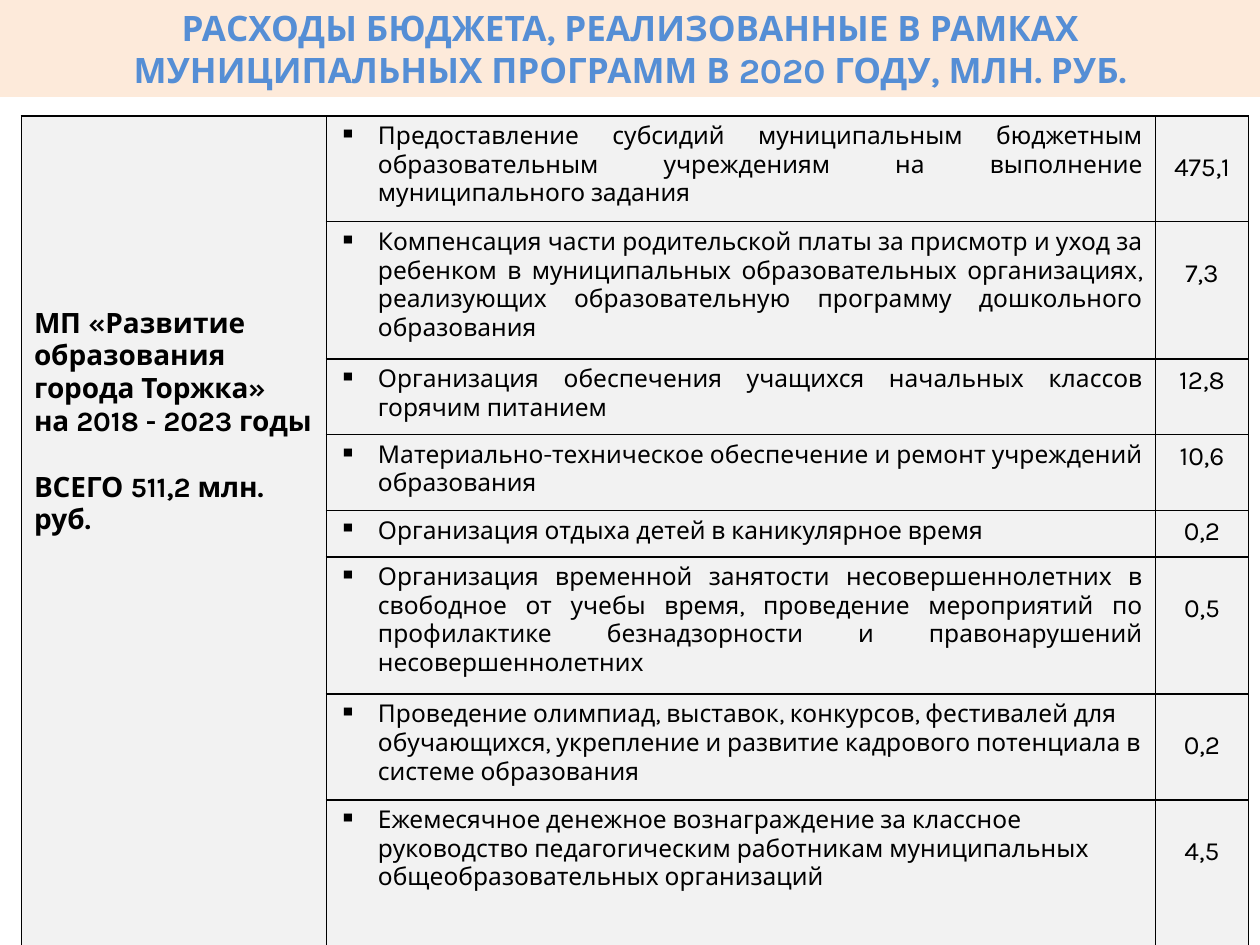
from dataclasses import dataclass

from lxml import etree
from pptx import Presentation
from pptx import util as u
from pptx.dml import color
from pptx.enum import shapes, text
from pptx.oxml import ns


@dataclass(frozen=True)
class Theme:
    """Colours, type sizes and font of the slide."""
    font: str = "Karla"
    ink: str = "000000"
    title_ink: str = "558ED5"
    title_fill: str = "FDEADA"
    cell_fill: str = "F2F2F2"
    title_size: int = 20
    programme_size: int = 16
    item_size: int = 14
    amount_size: int = 15


THEME = Theme()
ALIGN = text.PP_ALIGN

TITLE = ["РАСХОДЫ БЮДЖЕТА, РЕАЛИЗОВАННЫЕ В РАМКАХ",
         "МУНИЦИПАЛЬНЫХ ПРОГРАММ В 2020 ГОДУ, МЛН. РУБ."]
PROGRAMME = ["МП «Развитие образования города Торжка»",
             "на 2018 - 2023 годы",
             "ВСЕГО 511,2 млн. руб."]
COLUMNS = [2.42, 6.58, 0.74]
EXPENSES = [
    ("Предоставление субсидий муниципальным бюджетным образовательным "
     "учреждениям на выполнение муниципального задания", "475,1", 0.84),
    ("Компенсация части родительской платы за присмотр и уход за ребенком "
     "в муниципальных образовательных организациях, реализующих "
     "образовательную программу дошкольного образования", "7,3", 1.09),
    ("Организация обеспечения учащихся начальных классов горячим питанием",
     "12,8", 0.6),
    ("Материально-техническое обеспечение и ремонт учреждений образования",
     "10,6", 0.6),
    ("Организация отдыха детей в каникулярное время", "0,2", 0.37),
    ("Организация временной занятости несовершеннолетних в свободное от учебы "
     "время, проведение мероприятий по профилактике безнадзорности и "
     "правонарушений несовершеннолетних", "0,5", 1.09),
    ("Проведение олимпиад, выставок, конкурсов, фестивалей для обучающихся, "
     "укрепление и развитие кадрового потенциала в системе образования",
     "0,2", 0.84),
    ("Ежемесячное денежное вознаграждение за классное руководство "
     "педагогическим работникам муниципальных общеобразовательных организаций",
     "4,5", 1.15),
]
JUSTIFIED_ROWS = 6
TALL_ROW = 0.8


def apply_format(target, values):
    """Set each named attribute of the target."""
    for name, value in values.items():
        setattr(target, name, value)


def write_lines(frame, lines, size, ink, bold=False, **paragraph_format):
    """Fill a text frame with one paragraph per line."""
    frame.word_wrap = True
    for index, line in enumerate(lines):
        paragraph = frame.paragraphs[0] if index == 0 else frame.add_paragraph()
        apply_format(paragraph, paragraph_format)
        run = paragraph.add_run()
        run.text = line
        apply_format(run.font, {"name": THEME.font, "size": u.Pt(size), "bold": bold})
        run.font.color.rgb = color.RGBColor.from_string(ink)


def add_bullet(paragraph):
    """Give a paragraph a hanging square bullet."""
    properties = paragraph._p.get_or_add_pPr()
    apply_indent = {"marL": u.Inches(0.31), "indent": -u.Inches(0.31)}
    for name, value in apply_indent.items():
        properties.set(name, str(int(value)))
    etree.SubElement(properties, ns.qn("a:buChar"), char="▪")


def style_cell(cell):
    """Give a cell its black borders and plain fill."""
    properties = cell._tc.get_or_add_tcPr()
    for side in ("a:lnL", "a:lnR", "a:lnT", "a:lnB"):
        border = etree.SubElement(properties, ns.qn(side), w=str(int(u.Pt(1))))
        fill = etree.SubElement(border, ns.qn("a:solidFill"))
        etree.SubElement(fill, ns.qn("a:srgbClr"), val=THEME.ink)
    cell.fill.solid()
    cell.fill.fore_color.rgb = color.RGBColor.from_string(THEME.cell_fill)


def add_title(slide):
    """Add the title band across the top."""
    band = slide.shapes.add_shape(shapes.MSO_SHAPE.RECTANGLE, 0, 0,
                                  u.Inches(10), u.Inches(0.77))
    band.shadow.inherit = False
    band.fill.solid()
    band.fill.fore_color.rgb = color.RGBColor.from_string(THEME.title_fill)
    band.line.fill.background()
    write_lines(band.text_frame, TITLE, THEME.title_size, THEME.title_ink,
                bold=True, alignment=ALIGN.CENTER)


def fill_programme(table):
    """Merge the first column and write the programme name and total."""
    cell = table.cell(0, 0)
    cell.merge(table.cell(len(EXPENSES) - 1, 0))
    cell.margin_top = u.Inches(1.52)
    write_lines(cell.text_frame, PROGRAMME, THEME.programme_size, THEME.ink,
                bold=True, alignment=ALIGN.LEFT)
    cell.text_frame.paragraphs[-1].space_before = u.Pt(19)


def fill_expense(table, row, item, amount, height):
    """Write one expense item and its amount."""
    table.rows[row].height = u.Inches(height)
    item_format = {"alignment": ALIGN.LEFT}
    if row < JUSTIFIED_ROWS:
        item_format = {"alignment": ALIGN.JUSTIFY, "space_before": u.Pt(8)}
    item_frame = table.cell(row, 1).text_frame
    write_lines(item_frame, [item], THEME.item_size, THEME.ink, **item_format)
    add_bullet(item_frame.paragraphs[0])
    amount_cell = table.cell(row, 2)
    if height > TALL_ROW:
        amount_cell.margin_top = u.Inches(0.29)
    write_lines(amount_cell.text_frame, [amount], THEME.amount_size, THEME.ink,
                alignment=ALIGN.CENTER)


def add_expense_table(slide):
    """Add the table of programme expenses."""
    height = sum(row_height for _, _, row_height in EXPENSES)
    table = slide.shapes.add_table(
        len(EXPENSES), len(COLUMNS), u.Inches(0.17), u.Inches(0.92),
        u.Inches(sum(COLUMNS)), u.Inches(height)).table
    apply_format(table, {"first_row": False, "horz_banding": False})
    for column, width in zip(table.columns, COLUMNS):
        column.width = u.Inches(width)
    for cell in table.iter_cells():
        style_cell(cell)
    fill_programme(table)
    for row, (item, amount, row_height) in enumerate(EXPENSES):
        fill_expense(table, row, item, amount, row_height)


def main():
    """Build and save the slide."""
    deck = Presentation()
    apply_format(deck, {"slide_width": u.Inches(10), "slide_height": u.Inches(7.5)})
    slide = deck.slides.add_slide(deck.slide_layouts[6])
    add_expense_table(slide)
    add_title(slide)
    deck.save("out.pptx")


if __name__ == "__main__":
    main()
